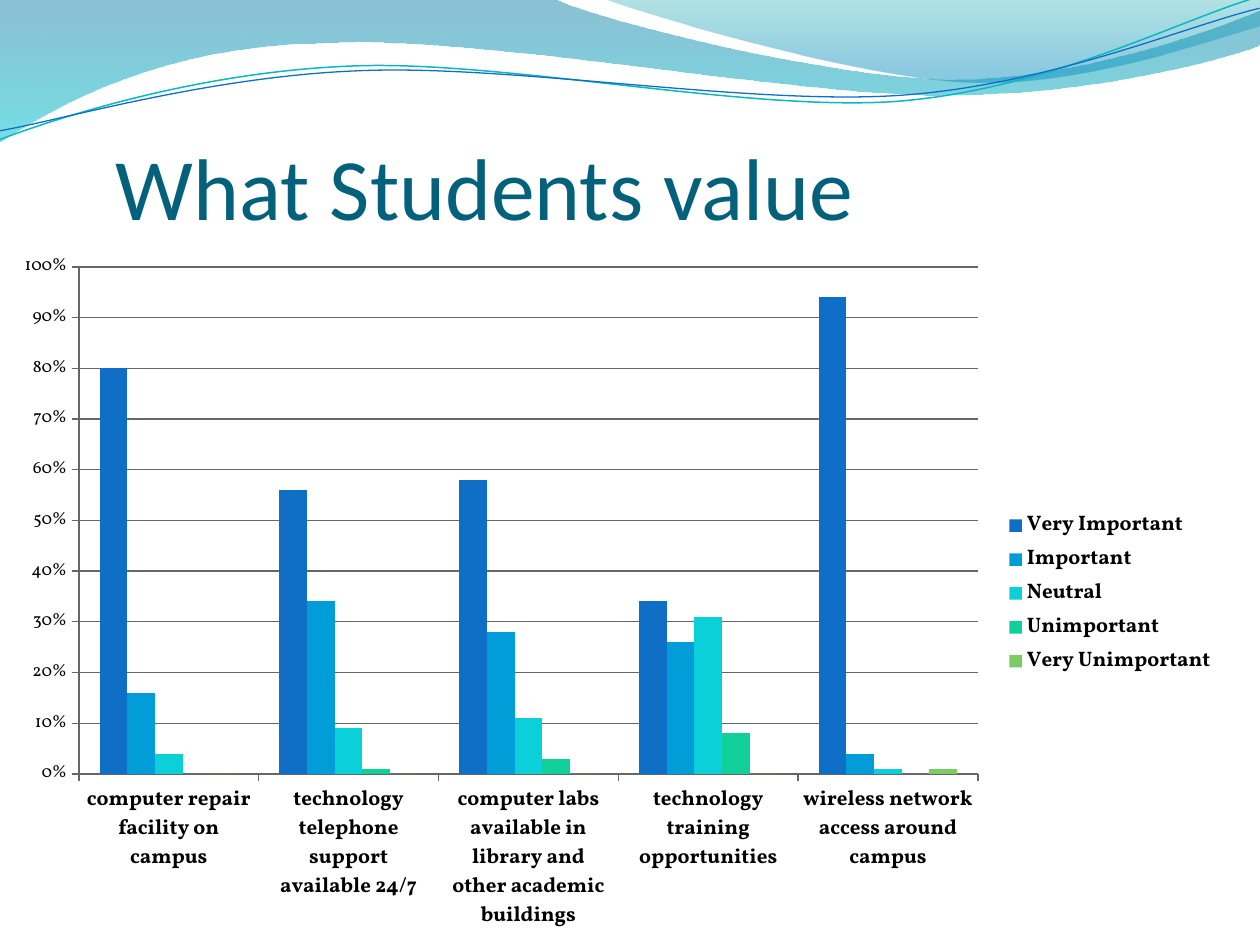
"""Build a slide with a wave header and a clustered column chart of what students value."""
from lxml.etree import SubElement
from pptx import Presentation
from pptx.chart.data import CategoryChartData
from pptx.dml.color import RGBColor
from pptx.enum.chart import XL_CHART_TYPE as ChartType, XL_LEGEND_POSITION as LegendPosition
from pptx.enum.chart import XL_TICK_MARK as TickMark
from pptx.enum.text import MSO_ANCHOR as Anchor, PP_ALIGN as Align
from pptx.oxml import parse_xml
from pptx.oxml.ns import nsdecls, qn
from pptx.util import Emu, Pt

PX = 914400 / 126
LINE_ROTATION = 357.3
COLORS = {
    "title": "04617B", "text": "000000", "axis": "666666",
    "teal line": "0AB8BF", "blue line": "0F6FC6",
}
TITLE = "What Students value"
TITLE_BOX = (116, 116, 976, 122)
CHART_BOX = (0, 242, 1228, 703)
PLOT_BOX = (79, 267, 899, 507)
CATEGORIES = [
    "computer repair facility on campus",
    "technology telephone support available 24/7",
    "computer labs available in library and other academic buildings",
    "technology training opportunities",
    "wireless network access around campus",
]
SERIES = [
    ("Very Important", "0F6FC6", (0.8, 0.56, 0.58, 0.34, 0.94)),
    ("Important", "009DD9", (0.16, 0.34, 0.28, 0.26, 0.04)),
    ("Neutral", "0BD0D9", (0.04, 0.09, 0.11, 0.31, 0.01)),
    ("Unimportant", "10CF9B", (0, 0.01, 0.03, 0.08, 0)),
    ("Very Unimportant", "7CCA62", (0, 0, 0, 0, 0.01)),
]
BANDS = [
    ([(0, 0), [(554, -1)],
      [(600, 21), (837, 79), (955, 79)], [(1075, 79), (1207, 33), (1260, 11)],
      [(1261, 45)], [(1239, 55), (1096, 96), (940, 95)],
      [(784, 95), (481, 35), (324, 43)], [(163, 45), (58, 105), (-1, 142)]],
     [(0, "0074A1", 45), (1, "00C6CF", 55)]),
    ([(604, -1), [(641, 14), (859, 78), (969, 82)],
      [(1079, 87), (1211, 40), (1260, 26)], [(1260, 0)]],
     [(0, "00A1A9", 30), (0.8, "008BBF", 45)]),
]
LINES = [
    ([(-3, 110), [(59, 90), (199, 52), (350, 53)],
      [(500, 53), (745, 118), (896, 114)], [(1049, 109), (1184, 45), (1260, 27)]],
     "teal line", 0.85),
    ([(-2, 101), [(57, 94), (207, 57), (357, 58)],
      [(509, 58), (750, 112), (902, 108)], [(1052, 104), (1188, 52), (1262, 38)]],
     "blue line", 0.75),
]


def px(value):
    return Emu(round(value * PX))


def rgb(value):
    return RGBColor.from_string(value)


def add_wave(shapes, outline, close):
    start, *segments = outline
    builder = shapes.build_freeform(*map(px, start))
    points = [(px(x), px(y)) for segment in segments for x, y in segment]
    builder.add_line_segments(points, close=close)
    shape = builder.convert_to_shape()
    shape.shadow.inherit = False
    steps = iter(list(shape._element.spPr.iter(qn("a:lnTo"))))
    for segment in segments:
        group = [next(steps) for _ in segment]
        if len(group) == 3:
            curve = group[0]
            for step in group[1:]:
                curve.append(step[0])
                step.getparent().remove(step)
            curve.tag = qn("a:cubicBezTo")
    return shape


def add_band(shapes, outline, stops):
    shape = add_wave(shapes, outline, True)
    shape.line.fill.background()
    shape.fill.gradient()
    shape.fill.gradient_angle = 270
    for stop, (position, color, _) in zip(shape.fill.gradient_stops, stops):
        stop.position = position
        stop.color.rgb = rgb(color)
    for element, (_, _, opacity) in zip(shape._element.spPr.iter(qn("a:srgbClr")), stops):
        SubElement(element, qn("a:alpha"), val=str(opacity * 1000))


def add_line(shapes, outline, color, width):
    shape = add_wave(shapes, outline, False)
    shape.rotation = LINE_ROTATION
    shape.fill.background()
    shape.line.color.rgb = rgb(COLORS[color])
    shape.line.width = Pt(width)


def format_title(title):
    title.left, title.top, title.width, title.height = map(px, TITLE_BOX)
    frame = title.text_frame
    frame.text = TITLE
    frame.vertical_anchor = Anchor.BOTTOM
    frame.margin_left = frame.margin_right = frame.margin_bottom = 0
    paragraph = frame.paragraphs[0]
    paragraph.alignment = Align.LEFT
    paragraph.font.size = Pt(50)
    paragraph.font.name = "Calibri"
    paragraph.font.color.rgb = rgb(COLORS["title"])


def place_plot(chart):
    left, top, width, height = CHART_BOX
    x, y, plot_width, plot_height = PLOT_BOX
    shares = {"x": (x - left) / width, "y": (y - top) / height,
              "w": plot_width / width, "h": plot_height / height}
    modes = "".join(f'<c:{key}Mode val="edge"/>' for key in "xy")
    sizes = "".join(f'<c:{key} val="{share:.4f}"/>' for key, share in shares.items())
    layout = parse_xml(
        f'<c:layout {nsdecls("c")}><c:manualLayout><c:layoutTarget val="inner"/>'
        f"{modes}{sizes}</c:manualLayout></c:layout>")
    plot_area = chart._chartSpace.chart.plotArea
    for old in plot_area.findall(qn("c:layout")):
        plot_area.remove(old)
    plot_area.insert(0, layout)


def add_chart(slide):
    data = CategoryChartData(number_format="0%")
    data.categories = CATEGORIES
    for name, _, values in SERIES:
        data.add_series(name, values)
    chart = slide.shapes.add_chart(
        ChartType.COLUMN_CLUSTERED, *map(px, CHART_BOX), data).chart
    chart.has_title = False
    chart.font.name = "Vollkorn"
    chart.font.size = Pt(10)
    chart.font.color.rgb = rgb(COLORS["text"])
    plot = chart.plots[0]
    plot.gap_width, plot.overlap = 150, 0
    plot.vary_by_categories = False
    for series, (_, color, _) in zip(plot.series, SERIES):
        series.format.fill.solid()
        series.format.fill.fore_color.rgb = rgb(color)
    values, categories = chart.value_axis, chart.category_axis
    values.minimum_scale, values.maximum_scale, values.major_unit = 0, 1, 0.1
    values.has_major_gridlines = True
    values.tick_labels.number_format = "0%"
    values.tick_labels.number_format_is_linked = False
    for axis in (values, categories):
        axis.major_tick_mark = TickMark.OUTSIDE
    for item in (values, categories, values.major_gridlines):
        item.format.line.color.rgb = rgb(COLORS["axis"])
        item.format.line.width = Pt(0.75)
    chart.has_legend = True
    chart.legend.position = LegendPosition.RIGHT
    chart.legend.include_in_layout = False
    for font in (categories.tick_labels.font, chart.legend.font):
        font.size = Pt(12)
        font.bold = True
    place_plot(chart)


def main():
    presentation = Presentation()
    presentation.slide_width, presentation.slide_height = px(1260), px(945)
    slide = presentation.slides.add_slide(presentation.slide_layouts[5])
    for band in BANDS:
        add_band(slide.shapes, *band)
    line_group = slide.shapes.add_group_shape()
    for line in LINES:
        add_line(line_group.shapes, *line)
    format_title(slide.shapes.title)
    add_chart(slide)
    presentation.save("out.pptx")


if __name__ == "__main__":
    main()
